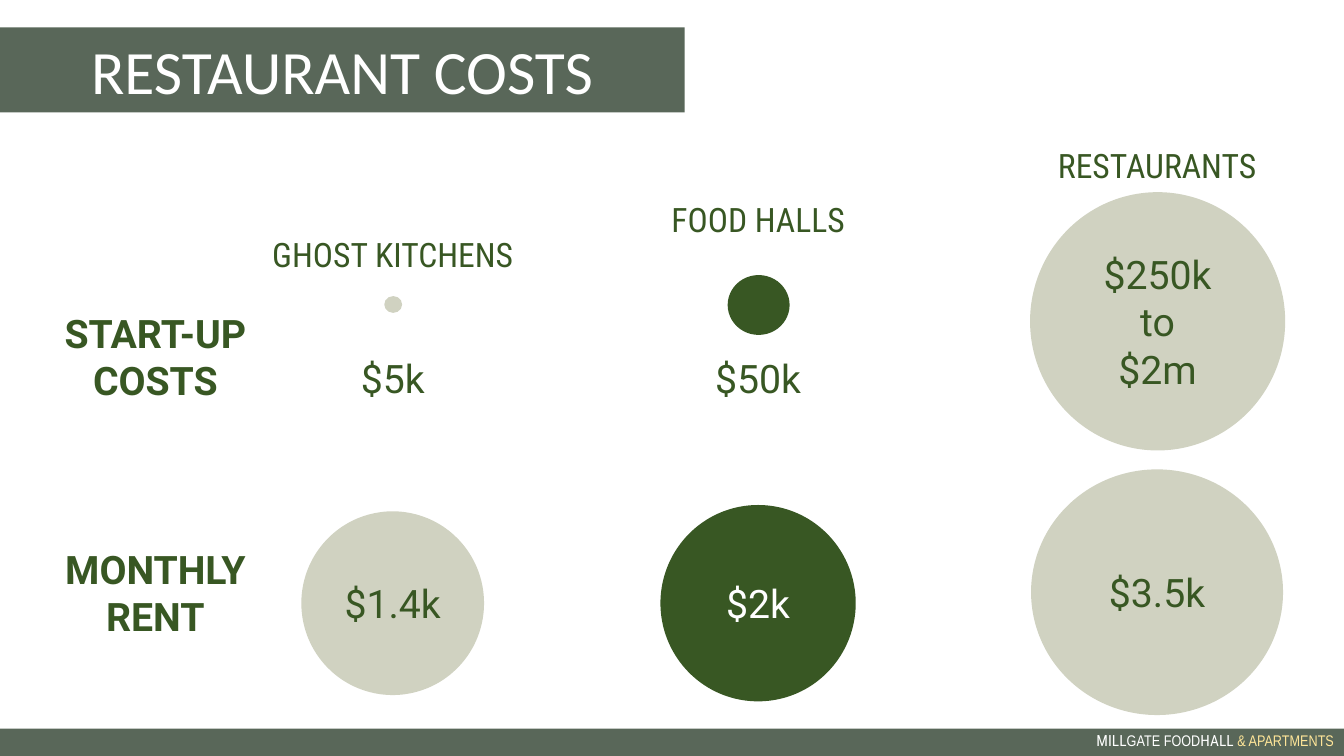
from pptx import Presentation
from pptx.dml.color import RGBColor
from pptx.enum.shapes import MSO_SHAPE
from pptx.enum.text import MSO_ANCHOR, PP_ALIGN

PX = 9525
OVAL, RECT = MSO_SHAPE.OVAL, MSO_SHAPE.RECTANGLE
CENTER, RIGHT = PP_ALIGN.CENTER, PP_ALIGN.RIGHT
TOP, MIDDLE = MSO_ANCHOR.TOP, MSO_ANCHOR.MIDDLE

THEME = {
    "slate": "596759", "sage": "D0D2C1", "forest": "385723",
    "white": "FFFFFF", "gold": "FFE699",
    "title": {"name": "Calibri", "size": 44 * 12700},
    "heading": {"name": "Roboto Condensed", "size": 24 * 12700},
    "value": {"name": "Roboto", "size": 28 * 12700},
    "row": {"name": "Roboto", "size": 28 * 12700, "bold": True},
    "footer": {"name": "Roboto Condensed", "size": 11 * 12700},
    "footer_alt": {"name": "Arial Narrow", "size": 11 * 12700},
}

prs = Presentation()
prs.slide_width, prs.slide_height = 1280 * PX, 720 * PX
s = prs.slides.add_slide(prs.slide_layouts[6])


def add_shape(kind, box, color):
    sp = s.shapes.add_shape(kind, *[v * PX for v in box])
    sp.shadow.inherit = False
    sp.fill.solid()
    sp.fill.fore_color.rgb = RGBColor.from_string(THEME[color])
    sp.line.fill.background()
    return sp


def add_text(sp, lines, align=CENTER, anchor=TOP):
    tf = sp.text_frame
    tf.word_wrap = True
    tf.vertical_anchor = anchor
    for i, runs in enumerate(lines):
        p = tf.add_paragraph() if i else tf.paragraphs[0]
        p.alignment = align
        for text, style, color in runs:
            r = p.add_run()
            r.text = text
            r.font.color.rgb = RGBColor.from_string(THEME[color])
            for key, value in THEME[style].items():
                setattr(r.font, key, value)


columns = [
    {"x": 374, "fill": "sage", "ink": "forest", "heading": ("GHOST KITCHENS", 218),
     "startup": (290, 17, 16, []), "below": "$5k", "rent": (574, 174, 175, ["$1.4k"])},
    {"x": 722, "fill": "forest", "ink": "white", "heading": ("FOOD HALLS", 185),
     "startup": (290, 59, 57, []), "below": "$50k", "rent": (574, 186, 187, ["$2k"])},
    {"x": 1102, "fill": "sage", "ink": "forest", "heading": ("RESTAURANTS", 133),
     "startup": (306, 243, 246, ["$250k", "to", "$2m"]), "below": None,
     "rent": (564, 240, 234, ["$3.5k"])},
]

labels = [("START-UP COSTS", "row", 148, 290, 252, 100),
          ("MONTHLY RENT", "row", 148, 515, 204, 100)]

for col in columns:
    for cy, w, h, values in (col["startup"], col["rent"]):
        sp = add_shape(OVAL, (col["x"] - w // 2, cy - h // 2, w, h), col["fill"])
        if values:
            add_text(sp, [[(v, "value", col["ink"])] for v in values], anchor=MIDDLE)
    heading, top = col["heading"]
    labels.append((heading, "heading", col["x"], top, 272, 48))
    if col["below"]:
        labels.append((col["below"], "value", col["x"], 333, 180, 55))

for text, style, cx, top, w, h in labels:
    box = s.shapes.add_textbox((cx - w // 2) * PX, top * PX, w * PX, h * PX)
    add_text(box, [[(text, style, "forest")]])

add_shape(RECT, (0, 694, 1280, 26), "slate")
footer = s.shapes.add_textbox(923 * PX, 692 * PX, 357 * PX, 28 * PX)
add_text(footer, [[("MILL", "footer", "white"), ("GATE FOOD", "footer_alt", "white"),
                   ("HALL ", "footer", "white"), ("& APARTMENTS", "footer_alt", "gold")]],
         align=RIGHT)

banner = add_shape(RECT, (0, 26, 652, 81), "slate")
add_text(banner, [[("RESTAURANT COSTS", "title", "white")]], anchor=MIDDLE)

prs.save("out.pptx")
